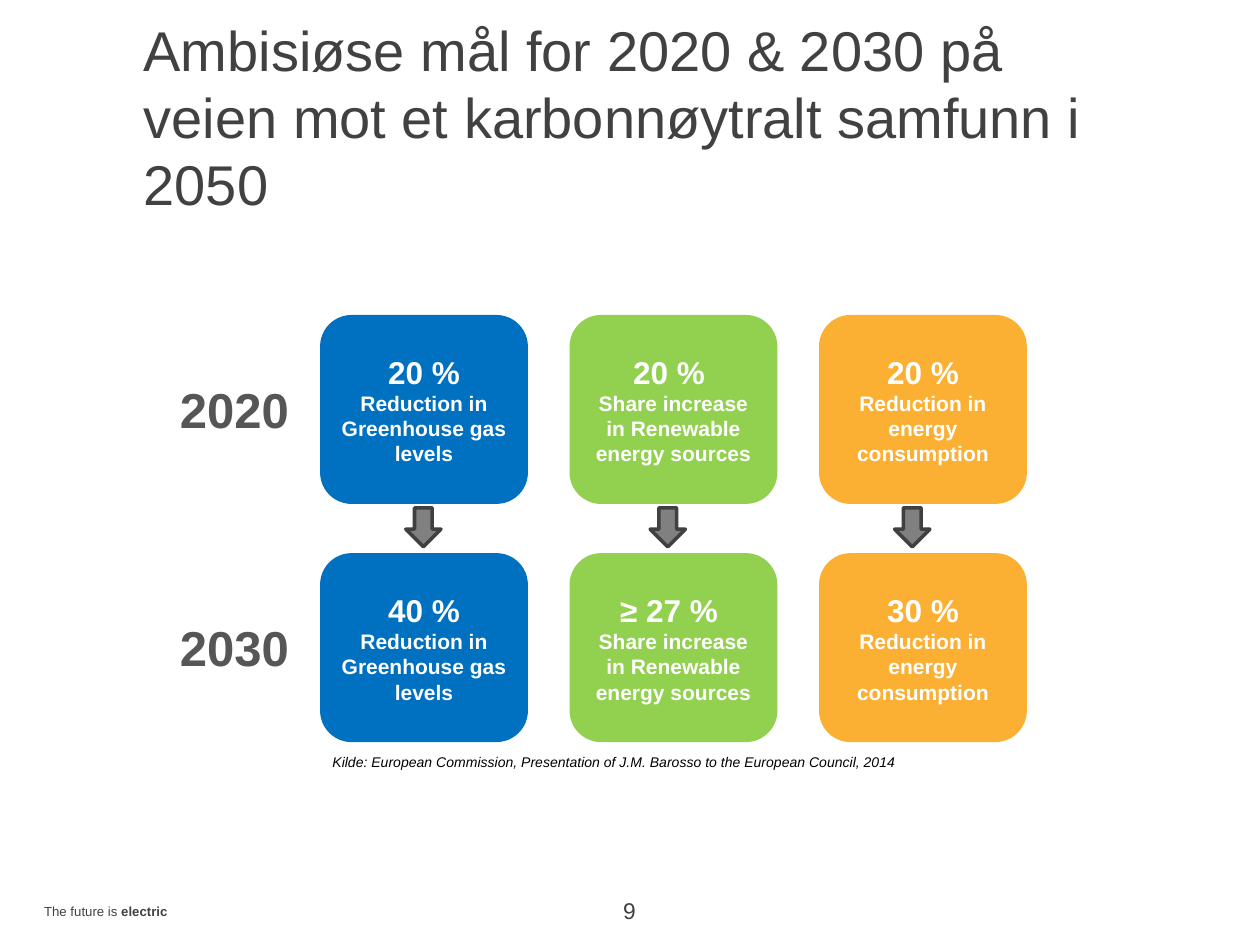
from pptx import Presentation
from pptx.dml.color import RGBColor
from pptx.enum.shapes import MSO_SHAPE
from pptx.enum.text import MSO_ANCHOR, PP_ALIGN
from pptx.util import Inches, Pt

BLUE = RGBColor(0x00, 0x70, 0xC0)
GREEN = RGBColor(0x92, 0xD0, 0x50)
ORANGE = RGBColor(0xFB, 0xB0, 0x34)
WHITE = RGBColor(0xFF, 0xFF, 0xFF)
BLACK = RGBColor(0x00, 0x00, 0x00)
CHARCOAL = RGBColor(0x41, 0x40, 0x42)
YEAR_GRAY = RGBColor(0x56, 0x56, 0x59)
ARROW_FILL = RGBColor(0x80, 0x80, 0x80)
ARROW_LINE = RGBColor(0x40, 0x40, 0x40)

LEFT, COLUMN_STEP = 2.54, 1.98
TOP, ROW_STEP = 2.5, 1.89
CARD_WIDTH, CARD_HEIGHT = 1.65, 1.5

deck = Presentation()
deck.slide_width, deck.slide_height = Inches(10), Inches(7.5)
slide = deck.slides.add_slide(deck.slide_layouts[6])


def style(para, size, color, bold=False, align=PP_ALIGN.LEFT):
    para.alignment = align
    para.font.name = "Arial"
    para.font.size = Pt(size)
    para.font.bold = bold
    para.font.color.rgb = color


def add_text(text, left, top, width, height, size, color, inset=True, **options):
    box = slide.shapes.add_textbox(Inches(left), Inches(top), Inches(width), Inches(height))
    frame = box.text_frame
    frame.word_wrap = True
    if not inset:
        frame.margin_left = frame.margin_right = frame.margin_top = frame.margin_bottom = 0
    para = frame.paragraphs[0]
    para.add_run().text = text
    style(para, size, color, **options)
    return frame


goals = [
    (BLUE, "Reduction in Greenhouse gas levels", ("20 %", "40 %")),
    (GREEN, "Share increase in Renewable energy sources", ("20 % ", "≥ 27 % ")),
    (ORANGE, "Reduction in energy consumption", ("20 %", "30 %")),
]
for column, (color, goal, targets) in enumerate(goals):
    for row, target in enumerate(targets):
        card = slide.shapes.add_shape(
            MSO_SHAPE.ROUNDED_RECTANGLE,
            Inches(LEFT + column * COLUMN_STEP), Inches(TOP + row * ROW_STEP),
            Inches(CARD_WIDTH), Inches(CARD_HEIGHT))
        card.shadow.inherit = False
        card.fill.solid()
        card.fill.fore_color.rgb = color
        card.line.fill.background()
        frame = card.text_frame
        frame.word_wrap = True
        frame.vertical_anchor = MSO_ANCHOR.MIDDLE
        frame.text = target
        style(frame.paragraphs[0], 18, WHITE, bold=True, align=PP_ALIGN.CENTER)
        para = frame.add_paragraph()
        para.text = goal
        style(para, 12, WHITE, bold=True, align=PP_ALIGN.CENTER)

    arrow = slide.shapes.add_shape(
        MSO_SHAPE.DOWN_ARROW, Inches(3.22 + column * 1.94), Inches(4.03),
        Inches(0.28), Inches(0.31))
    arrow.shadow.inherit = False
    arrow.fill.solid()
    arrow.fill.fore_color.rgb = ARROW_FILL
    arrow.line.color.rgb = ARROW_LINE
    arrow.line.width = Pt(2)

for row, year in enumerate(("2020", "2030")):
    add_text(year, 1.33, 2.96 + row * ROW_STEP, 1.14, 0.57, 28, YEAR_GRAY, bold=True)

source = add_text(
    "Kilde: European Commission, Presentation of J.M. Barosso to the European Council, 2014",
    LEFT, 5.93, 5.43, 0.24, 8, BLACK)
source.paragraphs[0].font.italic = True

title = add_text(
    "Ambisiøse mål for 2020 & 2030 på veien mot et karbonnøytralt samfunn i 2050",
    1.14, 0.64, 7.99, 1.08, 32, CHARCOAL, inset=False)
title.vertical_anchor = MSO_ANCHOR.BOTTOM

footer = add_text("The future is ", 0.35, 7.17, 1.94, 0.25, 7.5, CHARCOAL, inset=False)
span = footer.paragraphs[0].add_run()
span.text = "electric"
span.font.bold = True

add_text("9", 3.83, 7.12, 2.33, 0.25, 13, CHARCOAL, inset=False, align=PP_ALIGN.CENTER)

deck.save("out.pptx")
